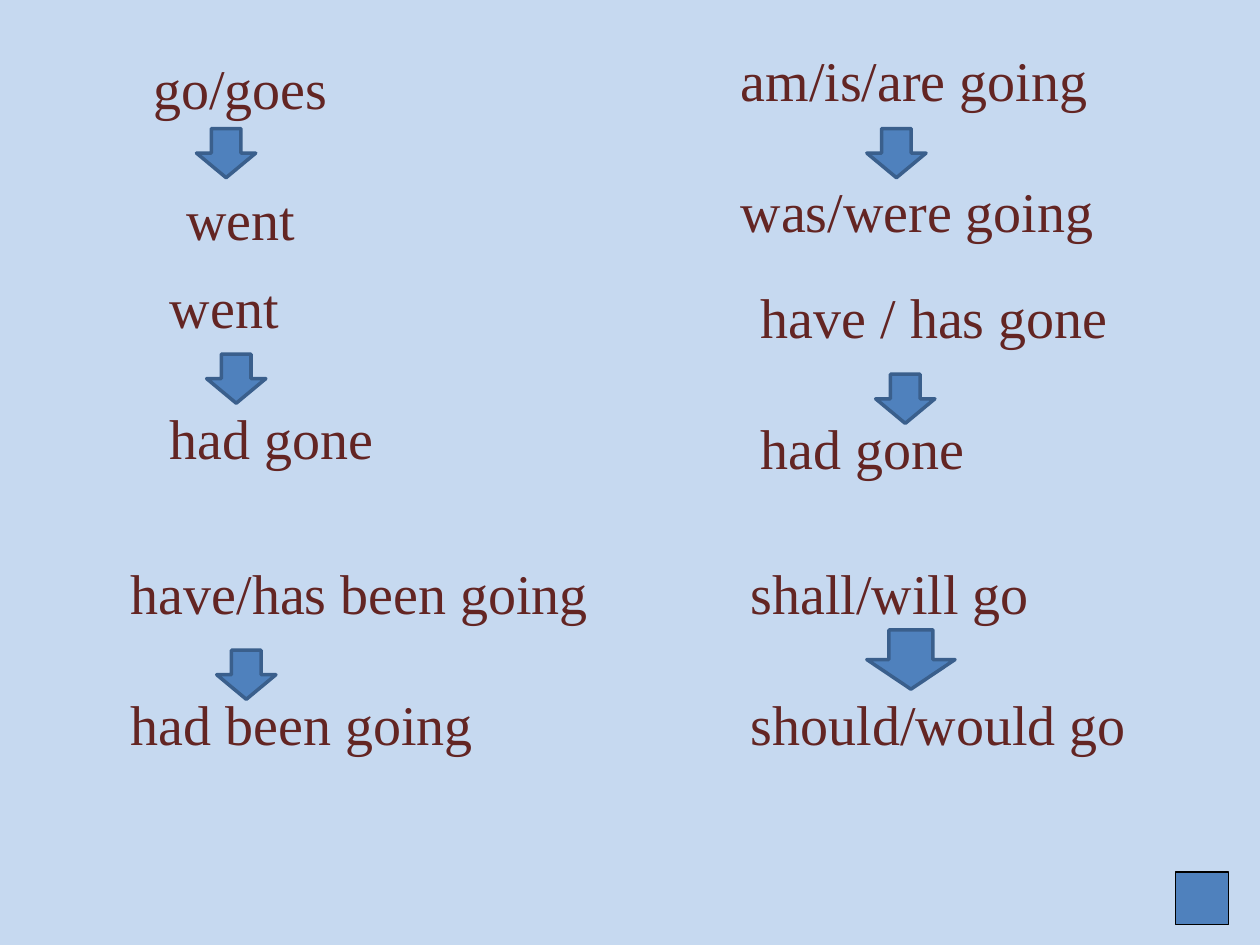
import dataclasses

import pptx
import pptx.dml.color
import pptx.enum.shapes
import pptx.enum.text
import pptx.util

Inches = pptx.util.Inches
Pt = pptx.util.Pt
Color = pptx.dml.color.RGBColor.from_string
Shapes = pptx.enum.shapes.MSO_SHAPE
Align = pptx.enum.text.PP_ALIGN


@dataclasses.dataclass(frozen=True)
class Theme:
    background: str = "C6D9F0"
    text: str = "632523"
    fill: str = "4F81BD"
    arrow_line: str = "3A5F8C"
    square_line: str = "000000"
    font: str = "Times New Roman"
    size: float = 32
    line_gap: float = 36.8  # one line of text, left free for the arrow


class TenseSlide:
    """Holds the theme and the slide, and draws each kind of element."""

    def __init__(self, presentation, theme):
        self.theme = theme
        self.slide = presentation.slides.add_slide(presentation.slide_layouts[5])
        background = self.slide.background.fill
        background.solid()
        background.fore_color.rgb = Color(theme.background)

    def write_pair(self, text_frame, before, after, alignment):
        text_frame.word_wrap = True
        text_frame.text = f"{before}\n{after}"
        for paragraph in text_frame.paragraphs:
            paragraph.alignment = alignment
            paragraph.space_before = Pt(0)
            for run in paragraph.runs:
                run.font.name = self.theme.font
                run.font.size = Pt(self.theme.size)
                run.font.color.rgb = Color(self.theme.text)
        text_frame.paragraphs[1].space_before = Pt(self.theme.line_gap)

    def title(self, before, after, left, top, width, height):
        title = self.slide.shapes.title
        title.left, title.top = Inches(left), Inches(top)
        title.width, title.height = Inches(width), Inches(height)
        title.text_frame.auto_size = pptx.enum.text.MSO_AUTO_SIZE.NONE
        title.text_frame.vertical_anchor = pptx.enum.text.MSO_ANCHOR.MIDDLE
        self.write_pair(title.text_frame, before, after, Align.CENTER)

    def tense_pair(self, before, after, left, top, width, height=1.72):
        box = self.slide.shapes.add_textbox(
            Inches(left), Inches(top), Inches(width), Inches(height))
        self.write_pair(box.text_frame, before, after, Align.LEFT)

    def block(self, kind, left, top, width, height, line_color, line_width):
        shape = self.slide.shapes.add_shape(
            kind, Inches(left), Inches(top), Inches(width), Inches(height))
        shape.shadow.inherit = False
        shape.fill.solid()
        shape.fill.fore_color.rgb = Color(self.theme.fill)
        shape.line.color.rgb = Color(line_color)
        shape.line.width = Pt(line_width)

    def arrow(self, left, top, width=0.47, height=0.39):
        self.block(Shapes.DOWN_ARROW, left, top, width, height,
                   self.theme.arrow_line, 2)

    def square(self, left, top, side):
        self.block(Shapes.RECTANGLE, left, top, side, side,
                   self.theme.square_line, 0.75)


def main():
    presentation = pptx.Presentation()
    presentation.slide_width = Inches(10)
    presentation.slide_height = Inches(7.5)
    tenses = TenseSlide(presentation, Theme())

    # Simple present, as the title
    tenses.title("go/goes", "went", 0.31, 0, 3.2, 2.42)

    # Corner square
    tenses.square(9.33, 6.92, 0.42)

    # Other tenses: direct form above, reported form below
    for pair in (
        ("am/is/are going", "was/were going", 5.78, 0.31, 3.44),
        ("went", "had gone", 1.25, 2.11, 2.81),
        ("have / has gone", "had gone", 5.94, 2.19, 3.75),
        ("have/has been going", "had been going", 0.94, 4.38, 3.91),
        ("shall/will go", "should/would go", 5.86, 4.38, 3.59),
    ):
        tenses.tense_pair(*pair)

    # Arrows from direct to reported form
    for left, top in ((1.56, 1.02), (6.88, 1.02), (6.95, 2.97),
                      (1.64, 2.81), (1.72, 5.16)):
        tenses.arrow(left, top)
    tenses.arrow(6.88, 5, 0.7, 0.47)

    presentation.save("out.pptx")


if __name__ == "__main__":
    main()
